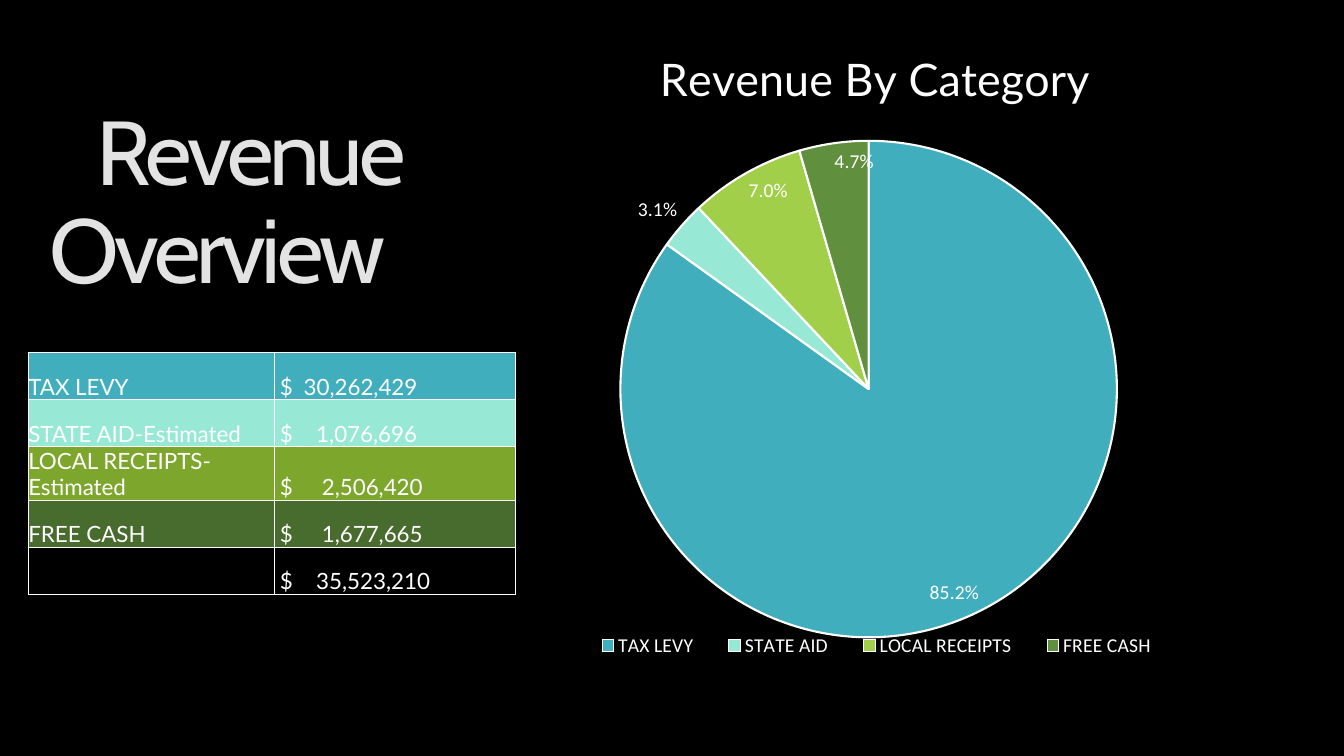
from dataclasses import dataclass

from lxml import etree
from pptx import Presentation
from pptx.chart.data import CategoryChartData
from pptx.dml.color import RGBColor
from pptx.enum.chart import XL_CHART_TYPE, XL_LABEL_POSITION, XL_LEGEND_POSITION
from pptx.enum.text import MSO_ANCHOR, PP_ALIGN
from pptx.oxml import parse_xml
from pptx.oxml.ns import nsdecls, qn
from pptx.util import Pt

PIE = XL_CHART_TYPE.PIE
INSIDE = XL_LABEL_POSITION.INSIDE_END
OUTSIDE = XL_LABEL_POSITION.OUTSIDE_END
LEGEND_BOTTOM = XL_LEGEND_POSITION.BOTTOM
ANCHOR_TOP = MSO_ANCHOR.TOP
ANCHOR_BOTTOM = MSO_ANCHOR.BOTTOM
RIGHT = PP_ALIGN.RIGHT


@dataclass(frozen=True)
class Theme:
    background: str = "000000"
    ink: str = "FFFFFF"
    title_stops: tuple = ((0, "969696"), (32, "E3E3E3"), (100, "FFFFFF"))
    title_font: str = "Cabin"
    body_font: str = "Lato"
    chart_font: str = "Calibri"
    title_size: float = 64.8
    chart_title_size: float = 32
    table_size: float = 16
    label_size: float = 14


@dataclass(frozen=True)
class Box:
    left: float
    top: float
    width: float
    height: float

    def points(self) -> tuple:
        return Pt(self.left), Pt(self.top), Pt(self.width), Pt(self.height)


@dataclass(frozen=True)
class Slice:
    name: str
    share: float
    label: str
    color: str
    position: object = INSIDE


@dataclass(frozen=True)
class Row:
    name: str
    amount: str
    tab: float
    color: str


THEME = Theme()
TITLE_BOX = Box(13.7, 72.7, 280, 197.3)
CHART_BOX = Box(336.2, 13, 563, 481.7)
TABLE_BOX = Box(20.2, 252, 347.8, 168)
COLUMNS = (175.7, 172.1)
SLICES = (
    Slice("TAX LEVY", 0.849, "85.2%", "41AEBD"),
    Slice("STATE AID", 0.031, "3.1%", "97E9D5", OUTSIDE),
    Slice("LOCAL RECEIPTS", 0.075, "7.0%", "A2CF49"),
    Slice("FREE CASH", 0.045, "4.7%", "608F3D"),
)
ROWS = (
    Row("TAX LEVY", "30,262,429", 17, "41AEBD"),
    Row("STATE AID-Estimated", "1,076,696", 26, "97E9D5"),
    Row("LOCAL RECEIPTS-Estimated", "2,506,420", 30, "7DA62C"),
    Row("FREE CASH", "1,677,665", 30, "486B2E"),
    Row("", "35,523,210", 26, "000000"),
)


def style_font(font, name: str, size: float) -> None:
    font.name = name
    font.size = Pt(size)
    font.bold = False
    font.color.rgb = RGBColor.from_string(THEME.ink)


def add_run(p, text: str, name: str, size: float) -> None:
    r = p.add_run()
    r.text = text
    style_font(r.font, name, size)


def add_title(slide) -> None:
    tf = slide.shapes.add_textbox(*TITLE_BOX.points()).text_frame
    tf.word_wrap = True
    tf.vertical_anchor = ANCHOR_TOP
    p = tf.paragraphs[0]
    p.alignment = RIGHT
    p.line_spacing = 0.9
    r = p.add_run()
    r.text = "Revenue Overview "
    r.font.name = THEME.title_font
    r.font.size = Pt(THEME.title_size)
    stops = "".join(
        f'<a:gs pos="{pos * 1000}"><a:srgbClr val="{color}"/></a:gs>'
        for pos, color in THEME.title_stops
    )
    props = r._r.get_or_add_rPr()
    props.set("spc", "-300")
    props.insert(0, parse_xml(
        f'<a:gradFill {nsdecls("a")}><a:gsLst>{stops}</a:gsLst>'
        '<a:lin ang="8100000" scaled="0"/></a:gradFill>'
    ))


def place(part, **fractions: float) -> None:
    for old in part.findall(qn("c:layout")):
        part.remove(old)
    layout = parse_xml(f'<c:layout {nsdecls("c")}><c:manualLayout/></c:layout>')
    manual = layout[0]
    if part.tag == qn("c:plotArea"):
        etree.SubElement(manual, qn("c:layoutTarget")).set("val", "inner")
    for axis in ("x", "y"):
        etree.SubElement(manual, qn(f"c:{axis}Mode")).set("val", "edge")
    for key, value in fractions.items():
        etree.SubElement(manual, qn(f"c:{key}")).set("val", str(value))
    overlay = part.find(qn("c:overlay"))
    if overlay is None:
        part.insert(0, layout)
    else:
        overlay.addprevious(layout)


def add_pie(slide) -> None:
    data = CategoryChartData(number_format="0.0%")
    data.categories = [s.name for s in SLICES]
    data.add_series("Series 1", [s.share for s in SLICES])
    chart = slide.shapes.add_chart(PIE, *CHART_BOX.points(), data).chart
    style_font(chart.font, THEME.chart_font, 10)

    chart.has_title = True
    p = chart.chart_title.text_frame.paragraphs[0]
    add_run(p, "Revenue By Category", THEME.body_font, THEME.chart_title_size)

    chart.has_legend = True
    chart.legend.position = LEGEND_BOTTOM
    chart.legend.include_in_layout = False
    style_font(chart.legend.font, THEME.chart_font, THEME.label_size)

    plot = chart.plots[0]
    plot.vary_by_categories = True
    series = plot.series[0]
    labels = series.data_labels
    labels.show_value = True
    labels.number_format = "0.0%"
    labels.number_format_is_linked = False
    style_font(labels.font, THEME.chart_font, THEME.label_size)
    for i, s in enumerate(SLICES):
        point = series.points[i]
        point.format.fill.solid()
        point.format.fill.fore_color.rgb = RGBColor.from_string(s.color)
        point.format.line.color.rgb = RGBColor.from_string(THEME.ink)
        point.format.line.width = Pt(1.5)
        p = point.data_label.text_frame.paragraphs[0]
        add_run(p, s.label, THEME.chart_font, THEME.label_size)
        point.data_label.position = s.position

    root = chart.element.find(qn("c:chart"))
    place(root.find(qn("c:title")), x=0.23, y=0.03)
    place(root.find(qn("c:plotArea")), x=0.19, y=0.18, w=0.63, h=0.74)
    place(root.find(qn("c:legend")), x=0.13, y=0.9, w=0.77, h=0.06)


def style_cell(cell, color: str) -> None:
    cell.margin_left = cell.margin_right = cell.margin_top = cell.margin_bottom = 0
    cell.vertical_anchor = ANCHOR_BOTTOM
    props = cell._tc.get_or_add_tcPr()
    for side in ("lnL", "lnR", "lnT", "lnB"):
        props.append(parse_xml(
            f'<a:{side} {nsdecls("a")} w="{Pt(1)}"><a:solidFill>'
            f'<a:srgbClr val="{THEME.ink}"/></a:solidFill></a:{side}>'
        ))
    cell.fill.solid()
    cell.fill.fore_color.rgb = RGBColor.from_string(color)


def add_revenue_table(slide) -> None:
    table = slide.shapes.add_table(len(ROWS), len(COLUMNS), *TABLE_BOX.points()).table
    table.first_row = table.horz_banding = False
    for column, width in zip(table.columns, COLUMNS):
        column.width = Pt(width)
    for i, row in enumerate(ROWS):
        table.rows[i].height = Pt(TABLE_BOX.height / len(ROWS))
        name, amount = table.cell(i, 0), table.cell(i, 1)
        style_cell(name, row.color)
        style_cell(amount, row.color)
        amount.margin_left = Pt(4)
        if row.name:
            add_run(name.text_frame.paragraphs[0], row.name, THEME.body_font, THEME.table_size)
        p = amount.text_frame.paragraphs[0]
        p._p.get_or_add_pPr().append(parse_xml(
            f'<a:tabLst {nsdecls("a")}><a:tab pos="{Pt(row.tab)}" algn="l"/></a:tabLst>'
        ))
        add_run(p, f"$\t{row.amount}", THEME.body_font, THEME.table_size)


def main() -> None:
    prs = Presentation()
    prs.slide_width, prs.slide_height = Pt(960), Pt(540)
    slide = prs.slides.add_slide(prs.slide_layouts[6])
    slide.background.fill.solid()
    slide.background.fill.fore_color.rgb = RGBColor.from_string(THEME.background)
    add_title(slide)
    add_pie(slide)
    add_revenue_table(slide)
    prs.save("out.pptx")


if __name__ == "__main__":
    main()
